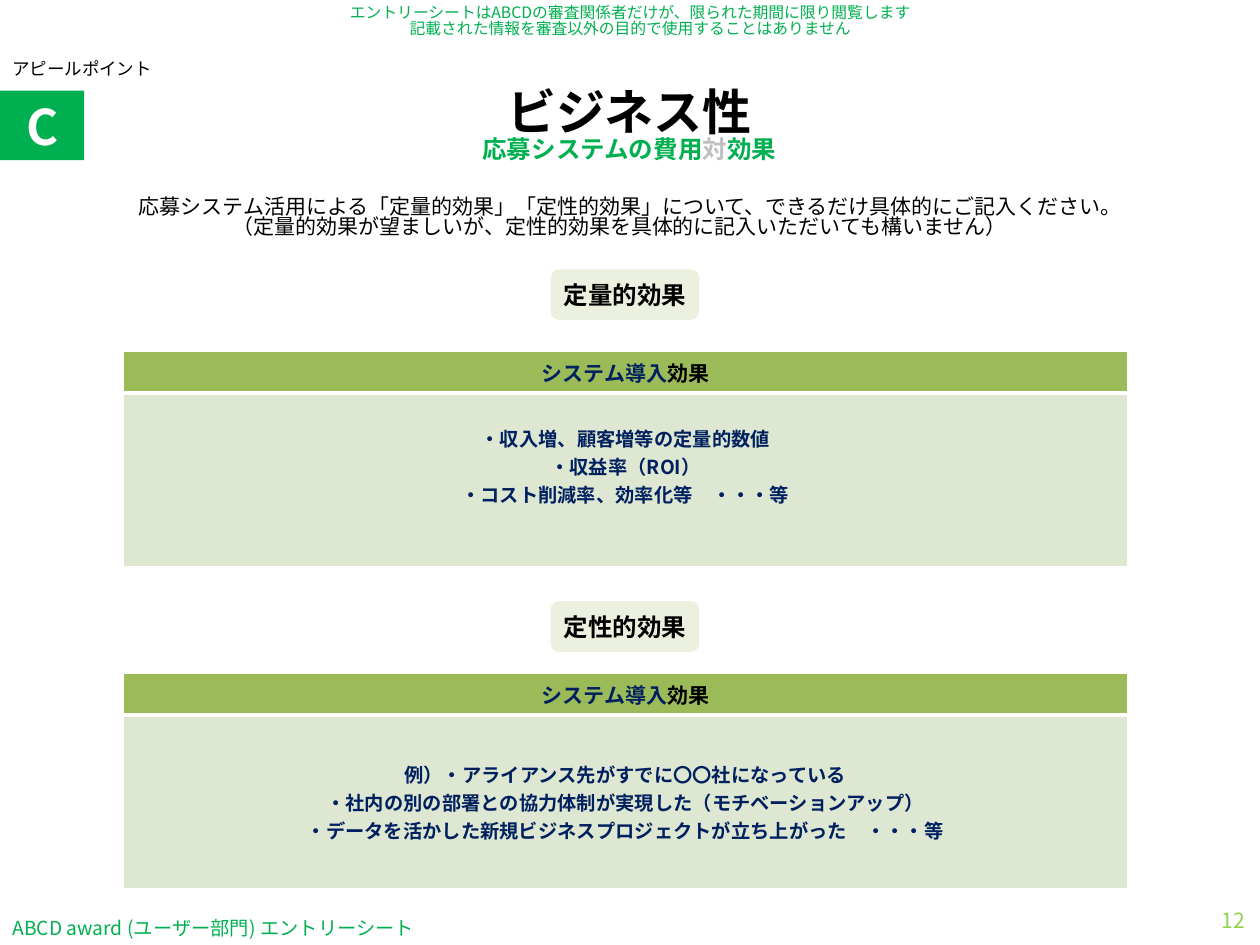
from copy import deepcopy
from dataclasses import dataclass

from lxml import etree
from pptx import Presentation
from pptx import util as u
from pptx.dml.color import RGBColor
from pptx.enum import lang, shapes, text
from pptx.oxml import ns

Cm = u.Cm
CENTER = text.PP_ALIGN.CENTER
MIDDLE = text.MSO_ANCHOR.MIDDLE


@dataclass(frozen=True)
class Theme:
    font: str = "Noto Sans CJK JP"
    green: str = "00B050"
    lime: str = "92D050"
    pale: str = "EBF1DE"
    header: str = "9BBB59"
    body: str = "DEE7D1"
    navy: str = "002060"
    grey: str = "BFBFBF"
    black: str = "000000"
    white: str = "FFFFFF"
    display: int = 28
    heading: int = 14
    normal: int = 12
    small: int = 11
    label: int = 10
    note: int = 9
    tight: float = 0.83


THEME = Theme()


def set_attributes(target, values):
    for name, value in values.items():
        setattr(target, name, value)


def add_run(paragraph, words, size, color, bold=False):
    run = paragraph.add_run()
    run.text = words
    set_attributes(run.font, {
        "size": u.Pt(size), "bold": bold, "name": THEME.font,
        "language_id": lang.MSO_LANGUAGE_ID.JAPANESE,
    })
    run.font.color.rgb = RGBColor.from_string(color)
    properties = run.font._element
    east_asian = etree.SubElement(properties, ns.qn("a:ea"))
    east_asian.set("typeface", THEME.font)
    properties.find(ns.qn("a:latin")).addnext(east_asian)
    return run


def add_break(paragraph, run):
    """Break the line at the type size of the run before it."""
    paragraph.add_line_break()
    paragraph._p[-1].append(deepcopy(run.font._element))


def write(frame, paragraphs, align=CENTER, spacing=1.0):
    """Fill a frame; each paragraph is a list of runs, None being a line break."""
    for index, runs in enumerate(paragraphs):
        paragraph = frame.add_paragraph() if index else frame.paragraphs[0]
        set_attributes(paragraph, {"alignment": align, "line_spacing": spacing})
        run = None
        for values in runs:
            if values is None:
                add_break(paragraph, run)
            else:
                run = add_run(paragraph, *values)


def add_text(slide, box, paragraphs, anchor=MIDDLE, wrap=True, **layout):
    shape = slide.shapes.add_textbox(*map(Cm, box))
    set_attributes(shape.text_frame, {"word_wrap": wrap, "vertical_anchor": anchor})
    write(shape.text_frame, paragraphs, **layout)


def add_block(slide, kind, box, fill, run):
    shape = slide.shapes.add_shape(kind, *map(Cm, box))
    shape.shadow.inherit = False
    shape.fill.solid()
    shape.fill.fore_color.rgb = RGBColor.from_string(fill)
    shape.line.fill.background()
    set_attributes(shape.text_frame, {"word_wrap": False, "vertical_anchor": MIDDLE})
    write(shape.text_frame, [[run]])


def format_cell(cell, fill, borders):
    properties = cell._tc.get_or_add_tcPr()
    for side, points in borders.items():
        line = etree.SubElement(properties, ns.qn(f"a:ln{side}"), w=str(u.Pt(points)))
        paint = etree.SubElement(line, ns.qn("a:solidFill"))
        etree.SubElement(paint, ns.qn("a:srgbClr"), val=THEME.white)
    cell.fill.solid()
    cell.fill.fore_color.rgb = RGBColor.from_string(fill)


def add_effect_table(slide, top, lines, lift):
    """Draw one table; lift is extra space below the body text."""
    heights = (0.84, 3.51)
    table = slide.shapes.add_table(
        2, 1, Cm(2.49), Cm(top), Cm(20.24), Cm(sum(heights))).table
    set_attributes(table, {"first_row": False, "horz_banding": False})
    for row, height in zip(table.rows, heights):
        row.height = Cm(height)
    header, body = table.cell(0, 0), table.cell(1, 0)
    format_cell(header, THEME.header, {"L": 1, "R": 1, "T": 1, "B": 3})
    format_cell(body, THEME.body, {"L": 1, "R": 1, "T": 3, "B": 1})
    write(header.text_frame, [[
        ("システム導入", THEME.normal, THEME.navy, True),
        ("効果", THEME.normal, THEME.black, True),
    ]])
    set_attributes(body, {"vertical_anchor": MIDDLE, "margin_bottom": Cm(0.13 + lift)})
    write(body.text_frame, [[(line, THEME.small, THEME.navy, True)] for line in lines])


def add_section(slide, name, badge_top, table_top, lines, lift=0):
    add_block(slide, shapes.MSO_SHAPE.FLOWCHART_ALTERNATE_PROCESS,
              (11.1, badge_top, 3, 1.02), THEME.pale,
              (name, THEME.heading, THEME.black, True))
    add_effect_table(slide, table_top, lines, lift)


def add_margin_texts(slide):
    note = (THEME.note, THEME.green)
    add_text(slide, (0, 18.36, 10, 0.69),
             [[("ABCD award (ユーザー部門) エントリーシート", THEME.small, THEME.green)]],
             wrap=False, align=text.PP_ALIGN.LEFT)
    add_text(slide, (6.2, 0, 13, 1), [[
        ("エントリーシートはABCDの審査関係者だけが、限られた期間に限り閲覧します", *note),
        None,
        ("記載された情報を審査以外の目的で使用することはありません", *note),
    ]], anchor=text.MSO_ANCHOR.TOP, wrap=False, spacing=THEME.tight)
    add_text(slide, (23.5, 18.03, 1.85, 1.02), [[("12", THEME.normal, THEME.lime)]],
             align=text.PP_ALIGN.RIGHT)


def add_heading(slide):
    add_text(slide, (0.69, 1.58, 24, 2.01), [[
        ("ビジネス性", THEME.display, THEME.black, True),
        None,
        ("応募システムの費用", THEME.heading, THEME.green, True),
        ("対", THEME.heading, THEME.grey, True),
        ("効果", THEME.heading, THEME.green, True),
    ]], spacing=0.8)
    add_text(slide, (0, 1.12, 4, 0.6),
             [[("アピールポイント", THEME.label, THEME.black)]],
             anchor=text.MSO_ANCHOR.TOP, wrap=False,
             align=text.PP_ALIGN.LEFT, spacing=THEME.tight)
    add_block(slide, shapes.MSO_SHAPE.RECTANGLE, (0, 1.83, 1.7, 1.4), THEME.green,
              ("C", THEME.display, THEME.white, True))
    instructions = (
        "応募システム活用による「定量的効果」「定性的効果」について、できるだけ具体的にご記入ください。",
        "（定量的効果が望ましいが、定性的効果を具体的に記入いただいても構いません）",
    )
    add_text(slide, (2.49, 3.9, 20.02, 1),
             [[(line, THEME.normal, THEME.black)] for line in instructions],
             spacing=THEME.tight)


def main():
    presentation = Presentation()
    set_attributes(presentation, {"slide_width": Cm(25.4), "slide_height": Cm(19.05)})
    slide = presentation.slides.add_slide(presentation.slide_layouts[6])
    add_margin_texts(slide)
    add_heading(slide)
    add_section(slide, "定量的効果", 5.43, 7.08, (
        "・収入増、顧客増等の定量的数値",
        "・収益率（ROI）",
        "・コスト削減率、効率化等　・・・等",
    ), lift=0.56)
    add_section(slide, "定性的効果", 12.12, 13.57, (
        "例）・アライアンス先がすでに〇〇社になっている",
        "・社内の別の部署との協力体制が実現した（モチベーションアップ）",
        "・データを活かした新規ビジネスプロジェクトが立ち上がった　・・・等",
    ))
    presentation.save("out.pptx")


if __name__ == "__main__":
    main()
